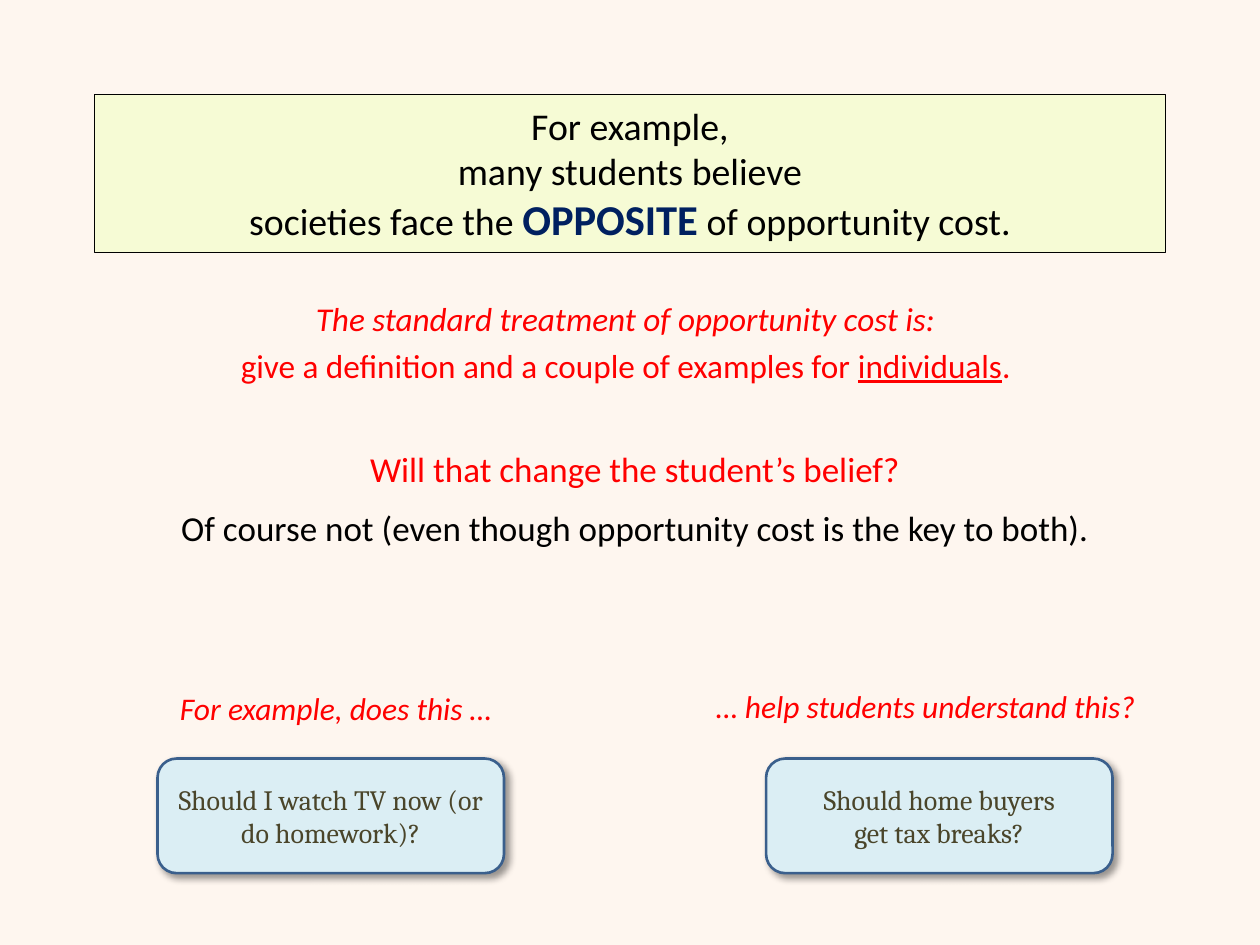
from dataclasses import dataclass, field

from lxml import etree
from pptx import Presentation
from pptx import util as u
from pptx.dml.color import RGBColor
from pptx.enum import shapes, text
from pptx.oxml import ns

BLACK = RGBColor(0x00, 0x00, 0x00)
RED = RGBColor(0xFF, 0x00, 0x00)
NAVY = RGBColor(0x00, 0x20, 0x60)
OLIVE = RGBColor(0x4A, 0x45, 0x2A)
CREAM = RGBColor(0xFE, 0xF6, 0xEF)
LIME = RGBColor(0xF6, 0xFB, 0xD5)
ICE = RGBColor(0xDB, 0xEE, 0xF4)
STEEL = RGBColor(0x3A, 0x5F, 0x8C)

LEFT, CENTER, RIGHT = text.PP_ALIGN.LEFT, text.PP_ALIGN.CENTER, text.PP_ALIGN.RIGHT


@dataclass
class Span:
    words: str
    size: float
    color: RGBColor = RED
    font: str = "Calibri"
    extras: dict = field(default_factory=dict)


@dataclass
class Block:
    """A place on the slide (inches) and its paragraphs of spans."""
    place: tuple
    paras: list
    align: int = CENTER
    gap: float = 0


def write(frame, block: Block) -> None:
    frame.word_wrap = True
    frame.auto_size = text.MSO_AUTO_SIZE.NONE
    for index, spans in enumerate(block.paras):
        para = frame.paragraphs[0] if index == 0 else frame.add_paragraph()
        para.alignment = block.align
        para.space_before = u.Pt(block.gap if index else 0)
        for span in spans:
            formats = {"name": span.font, "size": u.Pt(span.size), **span.extras}
            for number, line in enumerate(span.words.split("\n")):
                if number:
                    para.add_line_break()
                run = para.add_run()
                run.text = line
                run.font.color.rgb = span.color
                for name, value in formats.items():
                    setattr(run.font, name, value)


def paint(shape, fill: RGBColor, line: RGBColor, width: float) -> None:
    shape.fill.solid()
    shape.fill.fore_color.rgb = fill
    shape.line.color.rgb = line
    shape.line.width = u.Pt(width)
    shape.text_frame.vertical_anchor = text.MSO_ANCHOR.MIDDLE


def add_shadow(shape) -> None:
    effects = etree.SubElement(shape.element.spPr, ns.qn("a:effectLst"))
    shadow = etree.SubElement(effects, ns.qn("a:outerShdw"), blurRad=str(u.Pt(4)),
                              dist=str(u.Pt(3)), dir=str(45 * 60000), algn="tl",
                              rotWithShape="0")
    color = etree.SubElement(shadow, ns.qn("a:srgbClr"), val="000000")
    etree.SubElement(color, ns.qn("a:alpha"), val="40000")


def add_title(page, block: Block) -> None:
    title = page.shapes.title
    names = ("left", "top", "width", "height")
    for name, length in zip(names, block.place):
        setattr(title, name, u.Inches(length))
    paint(title, LIME, BLACK, 0.25)
    write(title.text_frame, block)


def add_text(page, block: Block) -> None:
    box = page.shapes.add_textbox(*map(u.Inches, block.place))
    write(box.text_frame, block)


def add_card(page, block: Block) -> None:
    card = page.shapes.add_shape(shapes.MSO_SHAPE.ROUNDED_RECTANGLE,
                                 *map(u.Inches, block.place))
    paint(card, ICE, STEEL, 1.5)
    add_shadow(card)
    write(card.text_frame, block)


def card_line(words: str) -> list:
    return [Span(words, 16, OLIVE, "Cambria")]


ITALIC = {"italic": True}

TITLE = Block((0.75, 0.75, 8.5, 1.25), [[
    Span("For example,\nmany students believe\nsocieties face the ", 21.6, BLACK),
    Span("OPPOSITE", 24.3, NAVY, extras={"bold": True}),
    Span(" of opportunity cost.", 21.6, BLACK),
]])

TEXTS = [
    Block((1.04, 3.5, 8, 0.92), [
        [Span("Will that change the student’s belief?", 20)],
        [Span("Of course not (even though opportunity cost is the key to both).",
              20, BLACK)],
    ], gap=9.6),
    Block((1.67, 2.32, 6.59, 0.92), [
        [Span("The standard treatment of opportunity cost is:", 19, extras=ITALIC)],
        [Span("give a definition and a couple of examples for ", 19),
         Span("individuals", 19, extras={"underline": True}),
         Span(".", 19)],
    ], gap=3.8),
    Block((1.33, 5.42, 2.92, 0.4),
          [[Span("For example, does this …", 18, extras=ITALIC)]], LEFT),
    Block((5.42, 5.4, 3.69, 0.4),
          [[Span("… help students understand this?", 18, extras=ITALIC)]], RIGHT),
]

CARDS = [
    Block((1.25, 6.02, 2.75, 0.91),
          [card_line("Should I watch TV now (or do homework)?")]),
    Block((6.08, 6.02, 2.75, 0.91),
          [card_line("Should home buyers"), card_line("get tax breaks?")]),
]


def main() -> None:
    deck = Presentation()
    deck.slide_width, deck.slide_height = u.Inches(10), u.Inches(7.5)
    page = deck.slides.add_slide(deck.slide_layouts.get_by_name("Title Only"))
    page.background.fill.solid()
    page.background.fill.fore_color.rgb = CREAM

    # Statement, explanation and the two compared questions
    add_title(page, TITLE)
    for block in TEXTS:
        add_text(page, block)
    for block in CARDS:
        add_card(page, block)
    deck.save("out.pptx")


if __name__ == "__main__":
    main()
